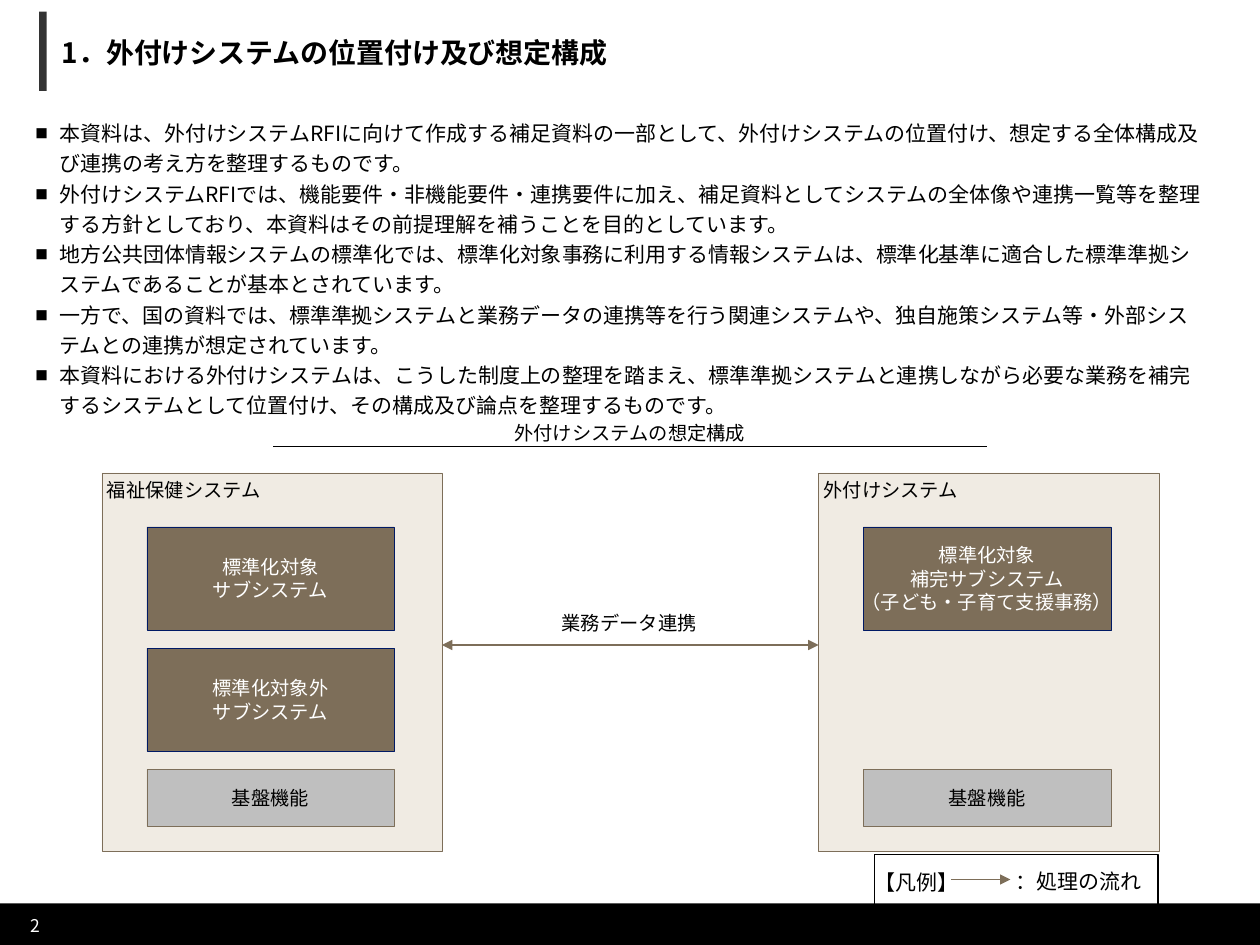
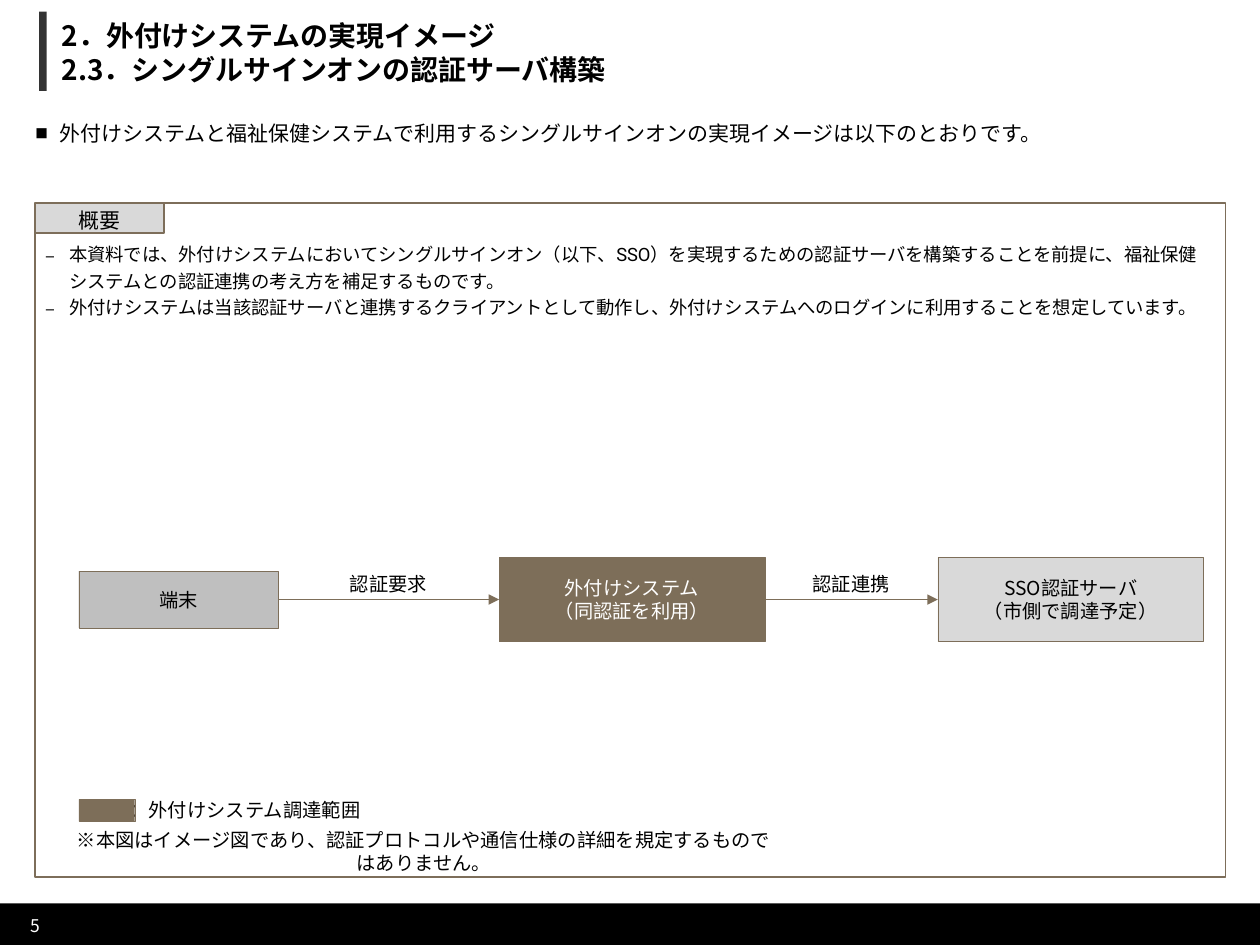
from dataclasses import dataclass, replace

import pptx
import pptx.dml.color
import pptx.enum.shapes
import pptx.enum.text
import pptx.oxml.ns
import pptx.presentation
import pptx.shapes.autoshape
import pptx.slide
import pptx.text.text
import pptx.util
from lxml import etree

Pt = pptx.util.Pt
ALIGN = pptx.enum.text.PP_ALIGN
ANCHOR = pptx.enum.text.MSO_ANCHOR
qn = pptx.oxml.ns.qn

FONT = "Noto Sans CJK JP"
LATIN = "Roboto"
HEX = {
    "black": "000000", "white": "FFFFFF", "bar": "333333", "brown": "7D6E59",
    "frame": "7D6E5A", "navy": "001964", "cream": "F0EBE3", "grey": "BFBFBF",
    "pale": "D9D9D9",
}
INDENT = 13.6


@dataclass(frozen=True)
class Style:
    """How the text of a box looks."""
    size: float = 11
    color: str = "black"
    bold: bool = False
    center: bool = True
    middle: bool = True
    space: float = 1.0
    pad: tuple[float, float] = (2.8, 2.8)
    bullet: str = ""
    scale: int = 100
    wrap: bool = True


@dataclass(frozen=True)
class Box:
    """A rectangle; in each line of text, "|" switches between the two fonts."""
    x: float
    y: float
    w: float
    h: float
    lines: tuple[str, ...] = ()
    fill: str = ""
    edge: str = ""
    weight: float = 0.25
    style: Style = Style()

    @property
    def right(self) -> float:
        return self.x + self.w


@dataclass(frozen=True)
class Arrow:
    x: float
    end: float
    y: float
    color: str = "brown"
    weight: float = 0.75
    head: bool = False
    tail: bool = True


LABEL = Style()
LIGHT = Style(color="white")
TIGHT = replace(LIGHT, wrap=False)
CORNER = Style(center=False, middle=False)
KEY = Style(size=12, center=False, space=1.2, pad=(0, 0))
HEAD = Style(size=16, bold=True, center=False, pad=(0, 0))
PAGE = replace(CORNER, size=10, color="white", pad=(0, 0))
LEAD = replace(KEY, middle=False, bullet="■", scale=60)
TAB = Style(size=12, space=1.2, pad=(5.8, 2.8))
DETAIL = replace(TAB, size=10.5, center=False, middle=False, bullet="–")


def rgb(name: str) -> pptx.dml.color.RGBColor:
    return pptx.dml.color.RGBColor.from_string(HEX[name])


def mark(para: pptx.text.text._Paragraph, style: Style) -> None:
    """Give a paragraph its hanging bullet."""
    props = para._p.get_or_add_pPr()
    props.set("marL", str(Pt(INDENT)))
    props.set("indent", str(-Pt(INDENT)))
    etree.SubElement(props, qn("a:buSzPct"), val=str(style.scale * 1000))
    etree.SubElement(props, qn("a:buFont"), typeface=FONT)
    etree.SubElement(props, qn("a:buChar"), char=style.bullet)


def write(frame: pptx.text.text.TextFrame, lines: tuple[str, ...], style: Style) -> None:
    frame.auto_size = pptx.enum.text.MSO_AUTO_SIZE.NONE
    frame.word_wrap = style.wrap
    frame.vertical_anchor = ANCHOR.MIDDLE if style.middle else ANCHOR.TOP
    frame.margin_left = frame.margin_right = Pt(style.pad[0])
    frame.margin_top = frame.margin_bottom = Pt(style.pad[1])
    for i, line in enumerate(lines):
        para = frame.add_paragraph() if i else frame.paragraphs[0]
        para.alignment = ALIGN.CENTER if style.center else ALIGN.LEFT
        para.line_spacing = style.space
        if style.bullet:
            mark(para, style)
        font = para.font
        font.size, font.bold, font.name = Pt(style.size), style.bold, FONT
        font.color.rgb = rgb(style.color)
        etree.SubElement(para._p.pPr.find(qn("a:defRPr")), qn("a:ea"), typeface=FONT)
        if "|" not in line:
            para.text = line
            continue
        for j, part in enumerate(line.split("|")):
            if part:
                run = para.add_run()
                run.text = part
                if j % 2:
                    run.font.name = LATIN


def draw(slide: pptx.slide.Slide, box: Box) -> None:
    place = [Pt(v) for v in (box.x, box.y, box.w, box.h)]
    if box.fill or box.edge:
        shape = slide.shapes.add_shape(pptx.enum.shapes.MSO_SHAPE.RECTANGLE, *place)
        shape.shadow.inherit = False
    else:
        shape = slide.shapes.add_textbox(*place)
    if box.fill:
        shape.fill.solid()
        shape.fill.fore_color.rgb = rgb(box.fill)
    else:
        shape.fill.background()
    if box.edge:
        shape.line.color.rgb = rgb(box.edge)
        shape.line.width = Pt(box.weight)
    else:
        shape.line.fill.background()
    if box.lines:
        write(shape.text_frame, box.lines, box.style)


def link(slide: pptx.slide.Slide, arrow: Arrow) -> None:
    line = slide.shapes.add_connector(
        pptx.enum.shapes.MSO_CONNECTOR.STRAIGHT,
        Pt(arrow.x), Pt(arrow.y), Pt(arrow.end), Pt(arrow.y))
    line.line.color.rgb = rgb(arrow.color)
    line.line.width = Pt(arrow.weight)
    props = line._element.spPr
    for tag, shown in (("a:headEnd", arrow.head), ("a:tailEnd", arrow.tail)):
        if shown:
            etree.SubElement(props.find(qn("a:ln")), qn(tag), type="triangle")
    etree.SubElement(props, qn("a:effectLst"))


def start(deck: pptx.presentation.Presentation, page: str, title: str,
          lead: tuple[str, ...], height: float) -> pptx.slide.Slide:
    """Add a slide with its bands, page number, title and lead text."""
    slide = deck.slides.add_slide(deck.slide_layouts.get_by_name("Title Only"))
    draw(slide, Box(0, 516.2, 720, 23.8, fill="black"))
    draw(slide, Box(22.3, 6.6, 4.4, 45.4, fill="bar"))
    draw(slide, Box(17.3, 522.7, 36, 18, (page,), style=PAGE))
    head = slide.shapes.title
    head.left, head.top, head.width, head.height = map(Pt, (35.3, 7.9, 595.4, 43.9))
    write(head.text_frame, (title,), HEAD)
    draw(slide, Box(20.2, 66.2, 668.2, height, lead, fill="white", style=LEAD))
    return slide


def layout(deck: pptx.presentation.Presentation) -> None:
    """Position and assumed structure of the add-on system."""
    slide = start(deck, "2", "1．外付けシステムの位置付け及び想定構成", (
        "本資料は、外付けシステムRFIに向けて作成する補足資料の一部として、外付けシステムの位置付け、"
        "想定する全体構成及び連携の考え方を整理するものです。",
        "外付けシステムRFIでは、機能要件・非機能要件・連携要件に加え、補足資料としてシステムの全体像や"
        "連携一覧等を整理する方針としており、本資料はその前提理解を補うことを目的としています。",
        "地方公共団体情報システムの標準化では、標準化対象事務に利用する情報システムは、"
        "標準化基準に適合した標準準拠システムであることが基本とされています。",
        "一方で、国の資料では、標準準拠システムと業務データの連携等を行う関連システムや、"
        "独自施策システム等・外部システムとの連携が想定されています。",
        "本資料における外付けシステムは、こうした制度上の整理を踏まえ、標準準拠システムと連携しながら"
        "必要な業務を補完するシステムとして位置付け、その構成及び論点を整理するものです。",
    ), 175.7)

    # Caption with its rule
    draw(slide, Box(100.8, 239.8, 518.4, 15.1, ("外付けシステムの想定構成",)))
    link(slide, Arrow(156.2, 563.8, 255, "black", 0.25, tail=False))

    # Two systems with their parts
    systems = (
        (58.3, "福祉保健システム",
         (("標準化対象\vサブシステム",), ("標準化対象外\vサブシステム",))),
        (467.8, "外付けシステム",
         (("標準化対象\v補完サブシステム", "（子ども・子育て支援事務）"),)),
    )
    for x, name, parts in systems:
        draw(slide, Box(x, 270.3, 194.4, 216, (name,), "cream", "brown", style=CORNER))
        for i, lines in enumerate(parts):
            draw(slide, Box(x + 25.6, 301 + 69.4 * i, 141.4, 59, lines,
                            "brown", "navy", style=TIGHT))
        draw(slide, Box(x + 25.6, 439.7, 141.4, 32.5, ("基盤機能",), "grey", "brown"))

    # Data link between them
    link(slide, Arrow(252.5, 467.8, 368.6, head=True))
    draw(slide, Box(267.1, 341.3, 185, 28.8, ("業務データ連携",)))

    # Legend
    draw(slide, Box(499.7, 488.2, 162, 28.6, ("【凡例】",), edge="black",
                    weight=0.75, style=KEY))
    link(slide, Arrow(543.6, 577.4, 502.6))
    draw(slide, Box(580.3, 484.6, 81.4, 35.3, ("：処理の流れ",), style=KEY))


def signon(deck: pptx.presentation.Presentation) -> None:
    """Single sign-on flow."""
    slide = start(
        deck, "5",
        "2．外付けシステムの実現イメージ\v2.3．シングルサインオンの認証サーバ構築",
        ("外付けシステムと福祉保健システムで利用するシングルサインオンの実現イメージは以下のとおりです。",),
        43.9)

    # Overview frame
    draw(slide, Box(20.2, 115.9, 680.1, 385.3, edge="frame", weight=1))
    draw(slide, Box(20.2, 115.9, 73.4, 17.3, ("概要",), "pale", "frame", 1, TAB))
    draw(slide, Box(20.2, 133.9, 680.1, 112.3, (
        "|本資料では、外付け|システム|においてシングルサインオン（以下、SSO）を実現するための"
        "認証サーバを構築することを前提に、福祉保健システムとの認証連携の考え方を補足するものです。",
        "|外付け|システム|は当該認証サーバと連携するクライアントとして動作し、外付け|システム|"
        "へのログインに利用することを想定しています。",
    ), style=DETAIL))

    # Chain of sign-on steps, joined left to right
    axis = 342.6
    chain = (
        Box(45, axis - 16.2, 114, 32.4, ("端末",), "grey", "brown"),
        Box(285.2, axis - 24.1, 151.9, 48.2, ("|外付け|システム", "（同認証を利用）"),
            "brown", "brown", style=LIGHT),
        Box(535.9, axis - 24.1, 151.9, 48.2, ("SSO認証サーバ", "（市側で調達予定）"),
            "pale", "brown"),
    )
    for box in chain:
        draw(slide, box)
    for a, b, name in zip(chain, chain[1:], ("認証要求", "認証連携")):
        link(slide, Arrow(a.right, b.x, axis))
        draw(slide, Box((a.right + b.x - 91.4) / 2, 319, 91.4, 28.8, (name,)))

    # Note and legend
    draw(slide, Box(37.4, 472.3, 409.7, 28.8, (
        "※本図はイメージ図であり、認証プロトコルや通信仕様の詳細を規定するものではありません。",)))
    draw(slide, Box(59, 448.6, 162, 28.8, ("：|外付け|システム調達範囲",)))
    draw(slide, Box(45, 456.8, 32, 12.6, fill="brown", edge="brown"))


def main() -> None:
    deck = pptx.Presentation()
    deck.slide_width, deck.slide_height = Pt(720), Pt(540)
    layout(deck)
    signon(deck)
    deck.save("out.pptx")


if __name__ == "__main__":
    main()
